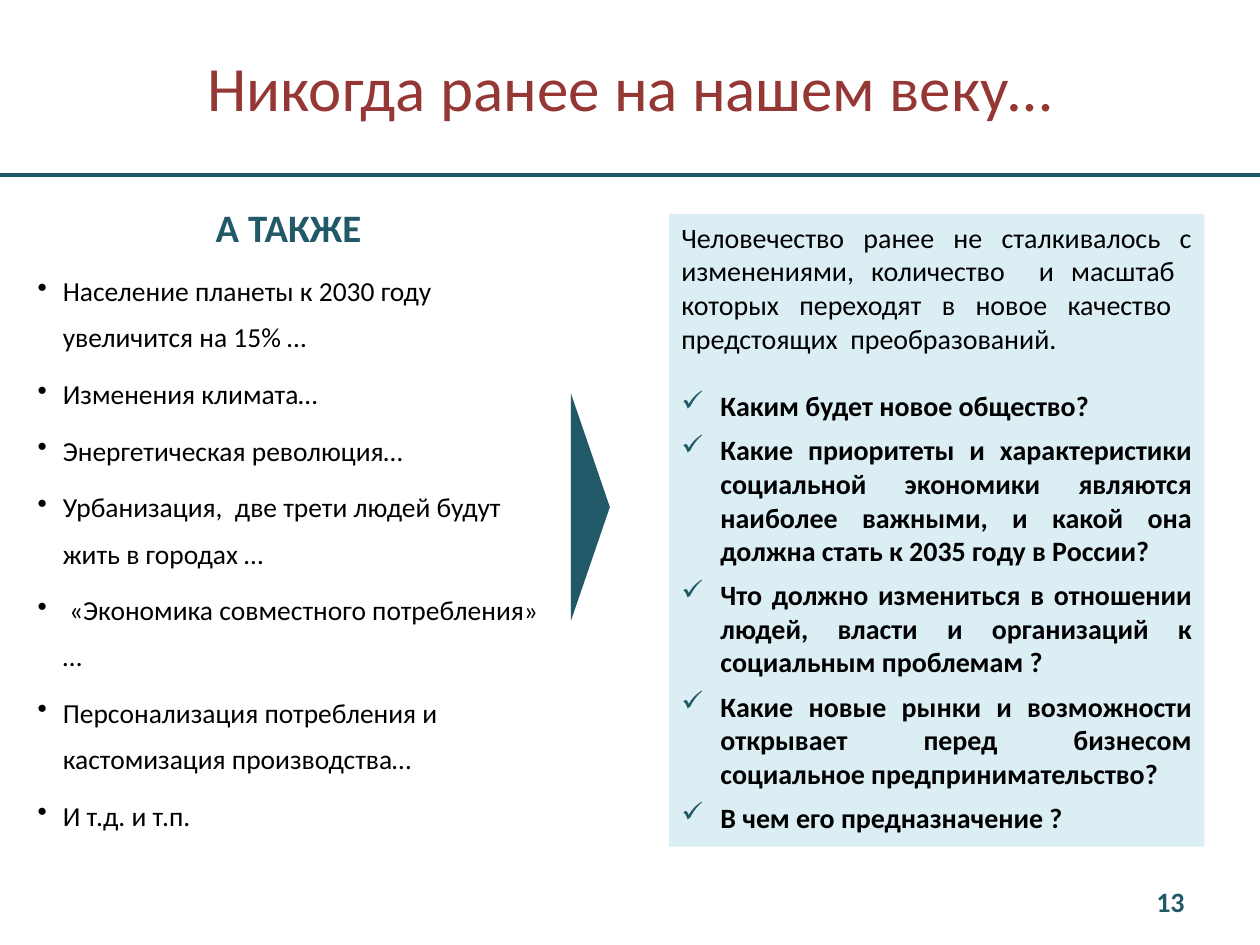
"""Build the slide on unprecedented changes of this century."""
from lxml import etree
from pptx import Presentation
from pptx.dml.color import RGBColor
from pptx.enum.shapes import MSO_CONNECTOR, MSO_SHAPE
from pptx.enum.text import MSO_ANCHOR, PP_ALIGN
from pptx.oxml.ns import qn
from pptx.util import Inches, Pt

LINE = MSO_CONNECTOR.STRAIGHT
RECT, WEDGE = MSO_SHAPE.RECTANGLE, MSO_SHAPE.ISOSCELES_TRIANGLE
TOP, MIDDLE = MSO_ANCHOR.TOP, MSO_ANCHOR.MIDDLE
LEFT, CENTER = PP_ALIGN.LEFT, PP_ALIGN.CENTER
RIGHT, JUSTIFY = PP_ALIGN.RIGHT, PP_ALIGN.JUSTIFY

COLORS = {"teal": "215968", "red": "953735", "pale": "DBEEF4", "black": "000000"}
FONT = "Calibri"

TITLE = "Никогда ранее на нашем веку…"
HEAD = "А ТАКЖЕ"
TRENDS = [
    "Население планеты к 2030 году увеличится на 15% …",
    "Изменения климата…",
    "Энергетическая революция…",
    "Урбанизация,  две трети людей будут жить в городах …",
    " «Экономика совместного потребления» …",
    "Персонализация потребления и кастомизация производства…",
    "И т.д. и т.п.",
]
INTRO = (
    "Человечество ранее не сталкивалось с изменениями, количество  и масштаб  "
    "которых переходят в новое качество  предстоящих  преобразований."
)
ASKS = [
    "Каким будет новое общество?",
    "Какие приоритеты и характеристики социальной экономики являются наиболее "
    "важными, и какой она должна стать к 2035 году в России?",
    "Что должно измениться в отношении людей, власти и организаций к социальным проблемам ?",
    "Какие новые рынки и возможности открывает перед бизнесом социальное предпринимательство?",
    "В чем его предназначение ?",
]
NUMBER = "13"

STYLES = {
    "title": {"size": 36, "color": "red", "para": {"alignment": CENTER}},
    "head": {"size": 22.2, "color": "teal", "bold": True, "para": {"alignment": CENTER}},
    "trend": {
        "size": 15.7, "color": "black", "bullet": ("•", "black", 0.2),
        "para": {"alignment": LEFT, "line_spacing": 1.4, "space_before": Pt(6)},
    },
    "intro": {
        "size": 16, "color": "black",
        "para": {"alignment": JUSTIFY, "space_after": Pt(19.5)},
    },
    "ask": {
        "size": 16, "color": "black", "bold": True, "bullet": ("✓", "teal", 0.31),
        "para": {"alignment": JUSTIFY, "space_after": Pt(6)},
    },
    "number": {"size": 16, "color": "teal", "bold": True, "para": {"alignment": RIGHT}},
}


def tint(name):
    return RGBColor.from_string(COLORS[name])


def mark(para, char, color, indent):
    props = para._p.get_or_add_pPr()
    props.set("marL", str(Inches(indent)))
    props.set("indent", str(-Inches(indent)))
    fill = etree.SubElement(props, qn("a:buClr"))
    etree.SubElement(fill, qn("a:srgbClr"), val=COLORS[color])
    etree.SubElement(props, qn("a:buChar"), char=char)


def write(shape, items, anchor=TOP):
    frame = shape.text_frame
    frame.word_wrap = True
    frame.vertical_anchor = anchor
    for i, (text, kind) in enumerate(items):
        style = STYLES[kind]
        para = frame.add_paragraph() if i else frame.paragraphs[0]
        if "bullet" in style:
            mark(para, *style["bullet"])
        for key, value in style["para"].items():
            setattr(para, key, value)
        run = para.add_run()
        run.text = text
        font = {"name": FONT, "size": Pt(style["size"]), "bold": style.get("bold", False)}
        for key, value in font.items():
            setattr(run.font, key, value)
        run.font.color.rgb = tint(style["color"])


def add_text(slide, spot, items, anchor=TOP):
    write(slide.shapes.add_textbox(*map(Inches, spot)), items, anchor)


def add_form(slide, kind, spot, color):
    shape = slide.shapes.add_shape(kind, *map(Inches, spot))
    shape.shadow.inherit = False
    shape.fill.solid()
    shape.fill.fore_color.rgb = tint(color)
    shape.line.fill.background()
    return shape


def add_rule(slide, y, width):
    rule = slide.shapes.add_connector(LINE, 0, Inches(y), Inches(width), Inches(y))
    rule.line.color.rgb = tint("teal")
    rule.line.width = Pt(2.25)
    etree.SubElement(rule._element.spPr, qn("a:effectLst"))


def main():
    deck = Presentation()
    deck.slide_width, deck.slide_height = Inches(10), Inches(7.5)
    slide = deck.slides.add_slide(deck.slide_layouts[6])

    add_rule(slide, 1.39, 10)
    add_text(slide, (0.5, 0.3, 9, 0.77), [(TITLE, "title")], MIDDLE)
    trends = [(HEAD, "head")] + [(text, "trend") for text in TRENDS]
    add_text(slide, (0.2, 1.57, 4.18, 5.39), trends)
    wedge = add_form(slide, WEDGE, (3.78, 3.87, 1.81, 0.31), "teal")
    wedge.rotation = 90
    panel = add_form(slide, RECT, (5.31, 1.7, 4.25, 5.02), "pale")
    write(panel, [(INTRO, "intro")] + [(text, "ask") for text in ASKS])
    add_text(slide, (7.17, 6.95, 2.33, 0.4), [(NUMBER, "number")], MIDDLE)

    deck.save("out.pptx")


if __name__ == "__main__":
    main()
